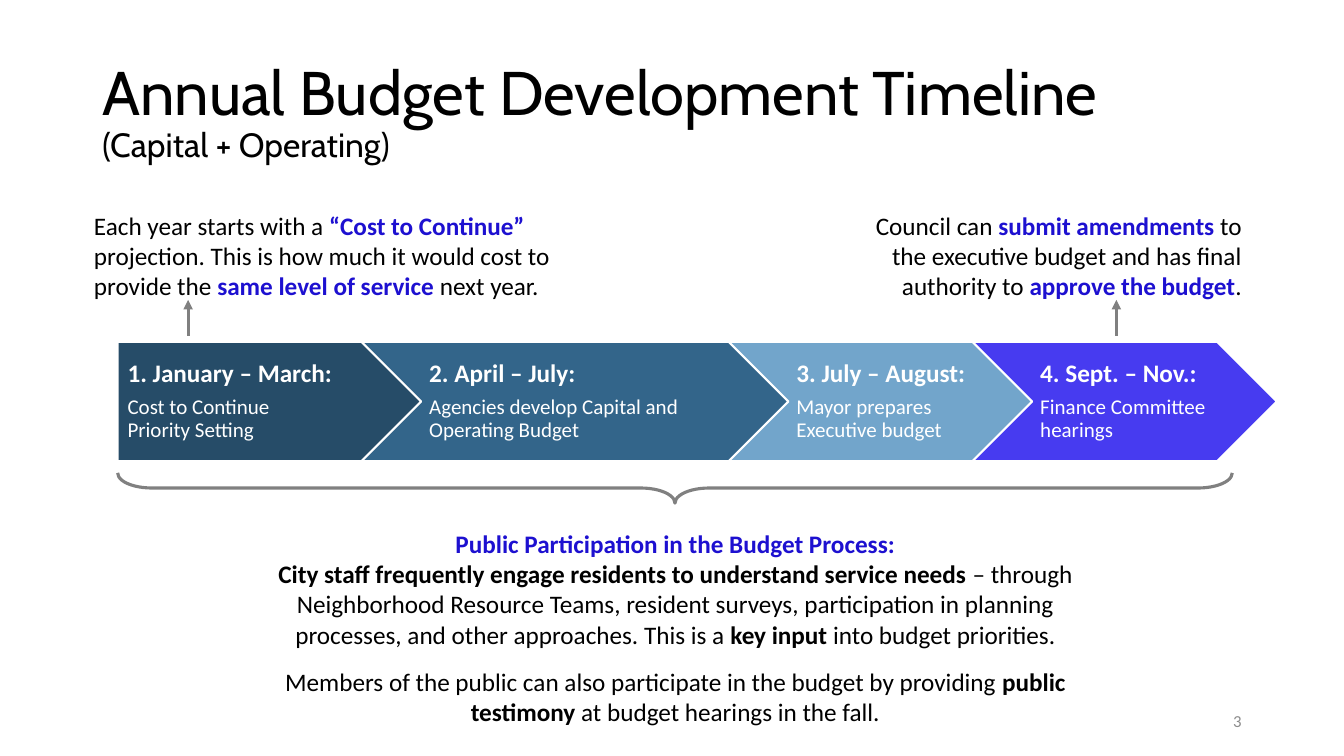
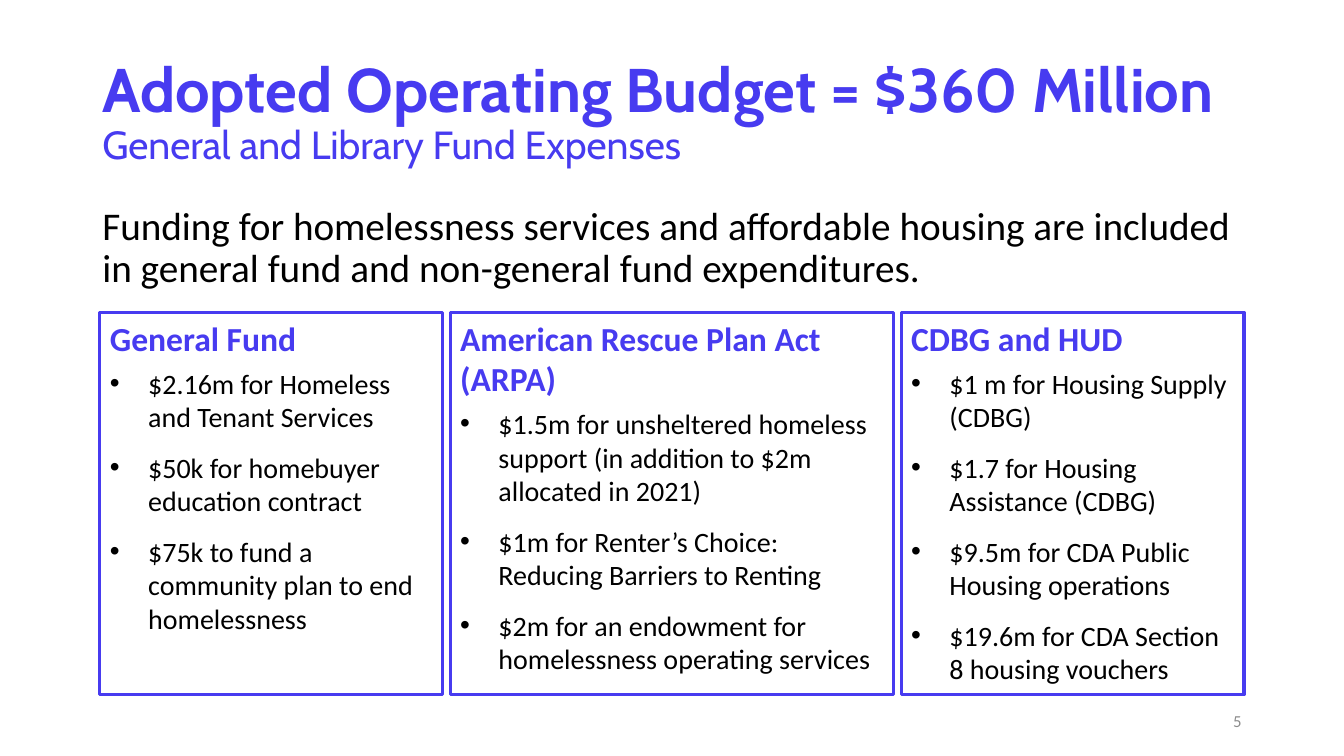
from lxml import etree
from pptx import Presentation
from pptx.dml.color import RGBColor
from pptx.enum.shapes import MSO_CONNECTOR, MSO_SHAPE
from pptx.enum.text import MSO_ANCHOR, PP_ALIGN
from pptx.oxml.ns import qn
from pptx.util import Inches, Pt

STRAIGHT = MSO_CONNECTOR.STRAIGHT
PENTAGON, CHEVRON = MSO_SHAPE.PENTAGON, MSO_SHAPE.CHEVRON
BRACE, RECTANGLE = MSO_SHAPE.RIGHT_BRACE, MSO_SHAPE.RECTANGLE
TOP, MIDDLE = MSO_ANCHOR.TOP, MSO_ANCHOR.MIDDLE
LEFT, CENTER, RIGHT = PP_ALIGN.LEFT, PP_ALIGN.CENTER, PP_ALIGN.RIGHT

BLACK = RGBColor(0x00, 0x00, 0x00)
WHITE = RGBColor(0xFF, 0xFF, 0xFF)
GRAY = RGBColor(0x80, 0x80, 0x80)
NUMBER_GRAY = RGBColor(0x8C, 0x8C, 0x8C)
NAVY = RGBColor(0x26, 0x4C, 0x68)
STEEL = RGBColor(0x33, 0x65, 0x8A)
SKY = RGBColor(0x72, 0xA5, 0xCB)
VIOLET = RGBColor(0x47, 0x3B, 0xF0)
ACCENT = RGBColor(0x1D, 0x10, 0xD0)

TITLE_FONT, BODY_FONT = "Cabin", "Calibri"
SLIDE_WIDTH, SLIDE_HEIGHT = Inches(13.333), Inches(7.5)
COLUMNS, ROWS = 160, 90
TITLE_BOX = (11, 4.8, 138, 17.4)
NUMBER_BOX = (113, 83.4, 36, 4.8)


def across(columns):
    return round(SLIDE_WIDTH * columns / COLUMNS)


def down(rows):
    return round(SLIDE_HEIGHT * rows / ROWS)


def place(box):
    left, top, width, height = box
    return across(left), down(top), across(width), down(height)


def add_text_frame(slide, box, anchor=TOP):
    frame = slide.shapes.add_textbox(*place(box)).text_frame
    frame.word_wrap = True
    frame.vertical_anchor = anchor
    return frame


def add_outline(slide, preset, box, line_color, line_width, fill=None):
    outline = slide.shapes.add_shape(preset, *place(box))
    outline.shadow.inherit = False
    outline.line.color.rgb = line_color
    outline.line.width = Pt(line_width)
    if fill is None:
        outline.fill.background()
    else:
        outline.fill.solid()
        outline.fill.fore_color.rgb = fill
    return outline


def add_bullet(paragraph):
    properties = paragraph._p.get_or_add_pPr()
    properties.set("marL", str(Inches(0.38)))
    properties.set("indent", str(-Inches(0.38)))
    etree.SubElement(properties, qn("a:buFont")).set("typeface", "Arial")
    etree.SubElement(properties, qn("a:buChar")).set("char", "•")


def write(frame, runs, size, color=BLACK, bold=False, align=LEFT,
          spacing=None, before=0, after=0, bullet=False):
    """Plain strings take the paragraph's style; (text, color) pairs are bold."""
    paragraph = frame.paragraphs[0]
    if paragraph.runs:
        paragraph = frame.add_paragraph()
    if bullet:
        add_bullet(paragraph)
    paragraph.alignment = align
    paragraph.line_spacing = spacing
    paragraph.space_before, paragraph.space_after = Pt(before), Pt(after)
    paragraph.font.name = BODY_FONT
    paragraph.font.size = Pt(size)
    paragraph.font.color.rgb = color
    paragraph.font.bold = bold
    for piece in runs:
        run = paragraph.add_run()
        if isinstance(piece, str):
            run.text = piece
        else:
            run.text, run.font.color.rgb = piece
            run.font.bold = True


def add_title(slide, heading, subheading, subheading_size, color, bold):
    paragraph = add_text_frame(slide, TITLE_BOX, MIDDLE).paragraphs[0]
    paragraph.line_spacing = 0.9
    paragraph.font.name = TITLE_FONT
    paragraph.font.color.rgb = color
    heading_run = paragraph.add_run()
    heading_run.text = heading
    heading_run.font.size = Pt(44)
    heading_run.font.bold = bold
    paragraph.add_line_break()
    subheading_run = paragraph.add_run()
    subheading_run.text = subheading
    subheading_run.font.size = Pt(subheading_size)


def add_page_number(slide, number):
    write(add_text_frame(slide, NUMBER_BOX, MIDDLE), [str(number)], 12,
          NUMBER_GRAY, align=RIGHT)


def add_phases(slide, left, top, height, phases):
    overlap = height / 2 + 0.1
    for index, (width, fill, period, tasks) in enumerate(phases):
        phase = add_outline(slide, CHEVRON if index else PENTAGON,
                            (left, top, width, height), WHITE, 1.5, fill)
        frame = phase.text_frame
        frame.word_wrap = True
        frame.vertical_anchor = MIDDLE
        frame.margin_left = Inches(0.08 if index else 0.1)
        frame.margin_right = Inches(0.03)
        write(frame, [period], 18, WHITE, bold=True, spacing=0.9, after=6)
        for task in tasks:
            write(frame, [task], 15, WHITE, spacing=0.9)
        left += width - overlap


def add_up_arrow(slide, column, bottom, top):
    arrow = slide.shapes.add_connector(
        STRAIGHT, across(column), down(bottom), across(column), down(top))
    arrow.line.color.rgb = GRAY
    arrow.line.width = Pt(2.25)
    etree.SubElement(arrow.line._get_or_add_ln(), qn("a:tailEnd")).set("type", "triangle")
    etree.SubElement(arrow._element.spPr, qn("a:effectLst"))


def add_note(slide, box, runs, align, arrow_column):
    write(add_text_frame(slide, box), runs, 18, align=align)
    add_up_arrow(slide, arrow_column, 40, 35.7)


def add_brace_below(slide, box):
    left, top, width, height = box
    upright = (left + (width - height) / 2, top + (height - width) / 2, height, width)
    brace = add_outline(slide, BRACE, upright, GRAY, 2.25)
    brace.rotation = 90
    brace.adjustments[0] = 1.13


def add_participation(slide, box):
    frame = add_text_frame(slide, box)
    write(frame, ["Public Participation in the Budget Process:"], 18, ACCENT,
          bold=True, align=CENTER)
    write(frame, [
        ("City staff frequently engage residents to understand service needs ", BLACK),
        "– through Neighborhood Resource Teams, resident surveys, participation in "
        "planning processes, and other approaches. This is a ",
        ("key input", BLACK), " into budget priorities."], 18, align=CENTER, after=12)
    write(frame, [
        "Members of the public can also participate in the budget by providing ",
        ("public testimony ", BLACK), "at budget hearings in the fall."],
        18, align=CENTER)


def add_fund_panels(slide, left, top, height, gap, funds):
    for width, fund, items in funds:
        panel = add_outline(slide, RECTANGLE, (left, top, width, height), VIOLET, 2.25)
        frame = panel.text_frame
        frame.word_wrap = True
        frame.vertical_anchor = TOP
        write(frame, [fund], 24, VIOLET, bold=True)
        for item in items:
            write(frame, [item], 20, before=6, after=6, bullet=True)
        left += width + gap


def build_timeline(slide):
    add_title(slide, "Annual Budget Development Timeline ", "(Capital + Operating)",
              24, BLACK, False)
    add_page_number(slide, 3)
    add_phases(slide, 14, 40.7, 14.2, [
        (36.24, NAVY, "1. January – March:", ["Cost to Continue", "Priority Setting"]),
        (50.9, STEEL, "2. April – July:",
         ["Agencies develop Capital and Operating Budget"]),
        (36.24, SKY, "3. July – August:", ["Mayor prepares Executive budget"]),
        (36.24, VIOLET, "4. Sept. – Nov.:", ["Finance Committee hearings"]),
    ])
    add_note(slide, (10, 24.4, 61.3, 12.1), [
        "Each year starts with a ", ("“Cost to Continue” ", ACCENT),
        "projection. This is how much it would cost to provide the ",
        ("same level of service ", ACCENT), "next year."], LEFT, 22.4)
    add_note(slide, (100.7, 24.4, 48.3, 12.1), [
        "Council can ", ("submit amendments ", ACCENT),
        "to the executive budget and has final authority to ",
        ("approve the budget", ACCENT), "."], RIGHT, 132.9)
    add_participation(slide, (28.9, 62.3, 103, 25.1))
    add_brace_below(slide, (14, 56.3, 132.7, 3.6))


def build_operating_budget(slide):
    add_title(slide, "Adopted Operating Budget = $360 Million",
              "General and Library Fund Expenses", 28, VIOLET, True)
    write(add_text_frame(slide, (11, 24, 138, 17.4)), [
        "Funding for homelessness services and affordable housing are included in "
        "general fund and non-general fund expenditures."], 28, spacing=0.9)
    add_page_number(slide, 5)
    add_fund_panels(slide, 11.9, 37.2, 45.5, 0.9, [
        (40.8, "General Fund", [
            "$2.16m for Homeless and Tenant Services",
            "$50k for homebuyer education contract",
            "$75k to fund a community plan to end homelessness"]),
        (52.8, "American Rescue Plan Act (ARPA)", [
            "$1.5m for unsheltered homeless support (in addition to $2m allocated in 2021)",
            "$1m for Renter’s Choice: Reducing Barriers to Renting",
            "$2m for an endowment for homelessness operating services"]),
        (40.8, "CDBG and HUD", [
            "$1 m for Housing Supply (CDBG)",
            "$1.7 for Housing Assistance (CDBG)",
            "$9.5m for CDA Public Housing operations",
            "$19.6m for CDA Section 8 housing vouchers"]),
    ])


def main():
    deck = Presentation()
    deck.slide_width, deck.slide_height = SLIDE_WIDTH, SLIDE_HEIGHT
    blank = deck.slide_layouts[6]
    for build in (build_timeline, build_operating_budget):
        build(deck.slides.add_slide(blank))
    deck.save("out.pptx")


if __name__ == "__main__":
    main()
